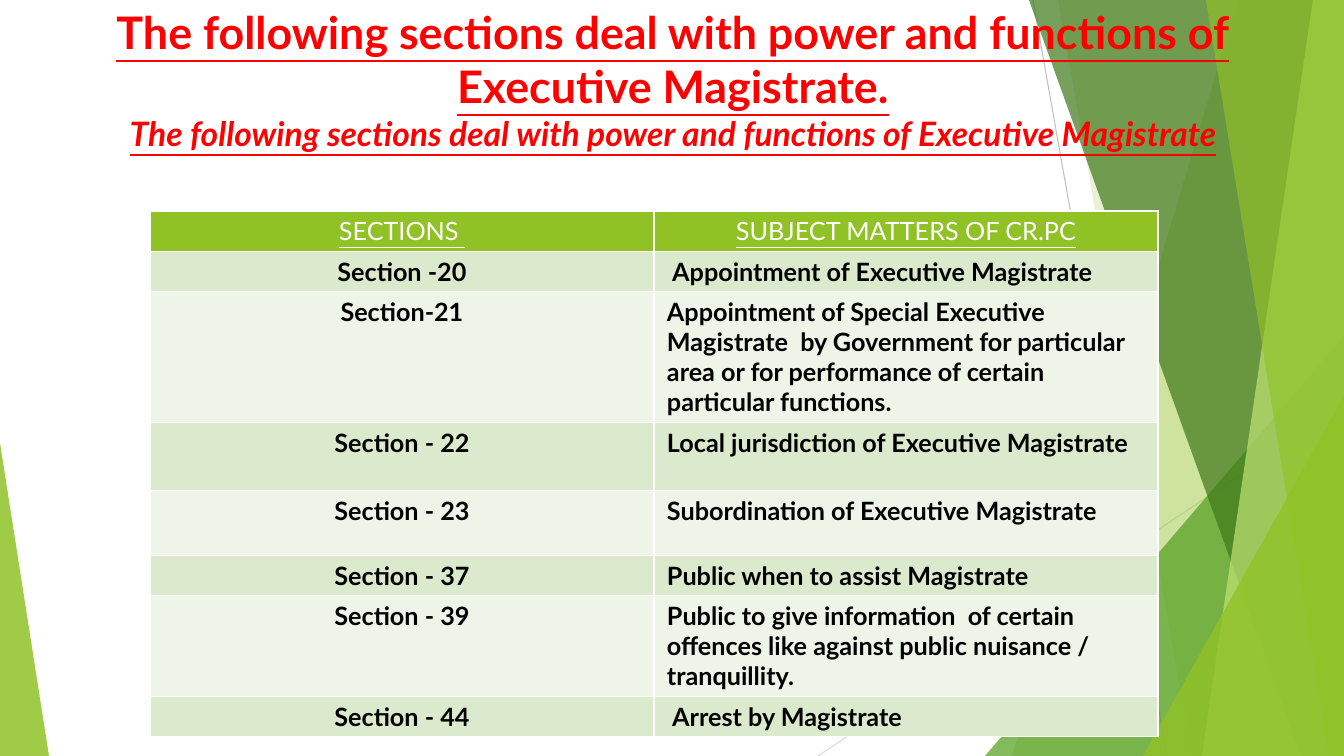
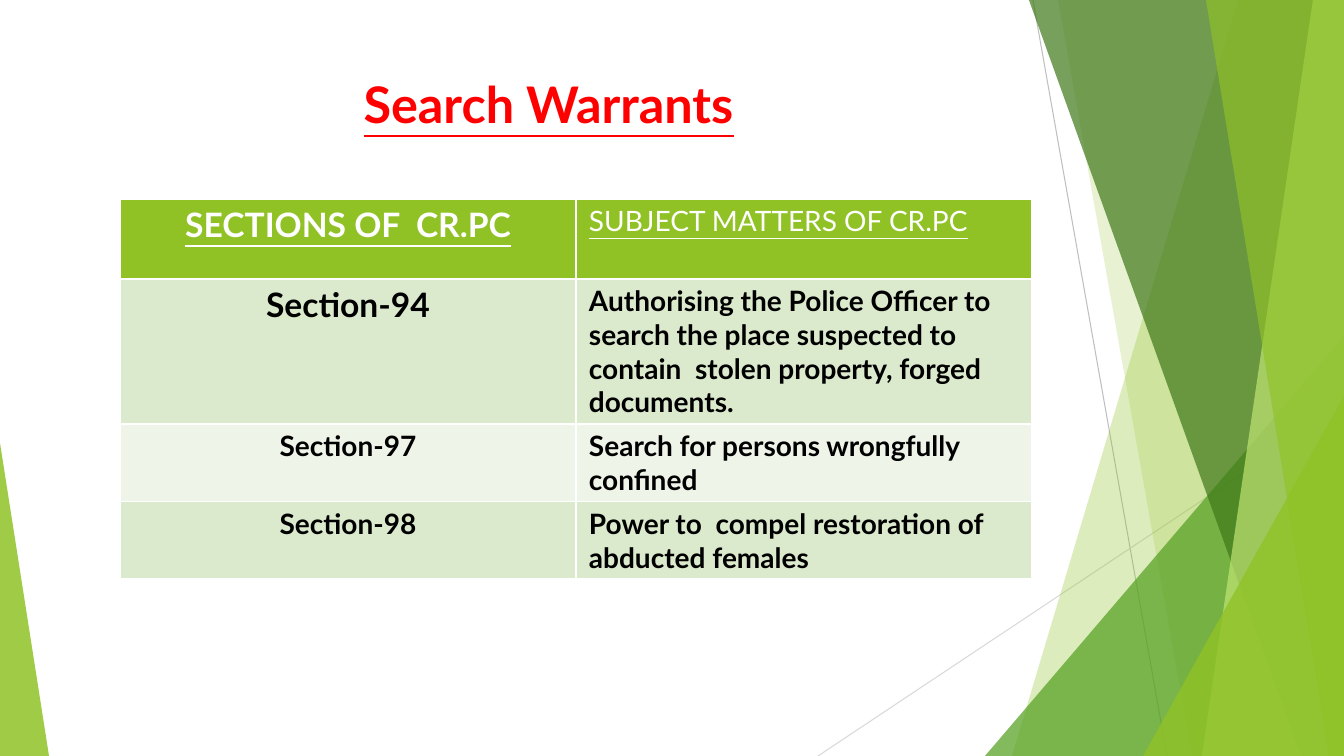
import pptx
import pptx.dml.color
import pptx.enum.shapes
import pptx.enum.text
import pptx.oxml.ns
import pptx.util
from lxml import etree

PX = 914400 / 100.8
WIDTH, HEIGHT = 1344, 756
FONT = "Lato"
COLORS = {
    "white": "FFFFFF", "black": "000000", "red": "FF0000",
    "lime": "90C226", "green": "54A021", "forest": "3F7819", "pale lime": "C0E474",
    "band dark": "DBE9CD", "band light": "EEF4E8",
    "line dark": "BFBFBF", "line light": "D9D9D9",
}
CENTER = pptx.enum.text.PP_ALIGN.CENTER
LEFT = pptx.enum.text.PP_ALIGN.LEFT
TRIANGLE = pptx.enum.shapes.MSO_SHAPE.ISOSCELES_TRIANGLE
STRAIGHT = pptx.enum.shapes.MSO_CONNECTOR.STRAIGHT

# Start and end points, colour
BACKDROP_LINES = [
    ((1033, 0, 1167, HEIGHT), "line dark"),
    ((WIDTH, 406, 818, HEIGHT), "line light"),
]
# A band runs to the right edge from (top x, bottom x);
# a triangle has (left, top, width, height, apex position).
BACKDROP_FACETS = [
    ((1238, 1012), "lime", 30),
    ((1058, 1192), "lime", 20),
    ((985, 336, 359, 420, 1), "green", 72),
    ((1029, 1301), "forest", 70),
    ((1313, 1202), "pale lime", 70),
    ((1206, 1329), "lime", 65),
    ((1143, 396, 201, 360, 1), "lime", 80),
    ((0, 443, 49, 313, 0), "lime", 85),
]

TITLE = {"color": "red", "bold": True, "underline": True}
HEADER = {"color": "white", "bold": False, "underline": True}
BODY = {"color": "black", "bold": True, "underline": False}

SLIDES = [
    {
        "title_box": (55, 0, 1236, 182),
        "title": [
            ("The following sections deal with power and functions of Executive Magistrate.",
             {"size": 32}),
            ("The following sections deal with power and functions of Executive Magistrate",
             {"size": 24, "italic": True}),
        ],
        "table_place": (150, 211),
        "column_width": 504,
        "cell_size": 18,
        "rows": [
            (40, "SECTIONS ", "SUBJECT MATTERS OF CR.PC"),
            (40, "Section -20", " Appointment of Executive Magistrate"),
            (131, "Section-21", "Appointment of Special Executive Magistrate  by Government "
                                "for particular area or for performance of certain "
                                "particular functions."),
            (68, "Section - 22", "Local jurisdiction of Executive Magistrate"),
            (65, "Section - 23", "Subordination of Executive Magistrate"),
            (40, "Section - 37", "Public when to assist Magistrate"),
            (101, "Section - 39", "Public to give information  of certain offences like "
                                  "against public nuisance / tranquillity."),
            (40, "Section - 44", " Arrest by Magistrate"),
        ],
        "header_alignments": (CENTER, CENTER),
        "special_cells": {},
    },
    {
        "title_box": (75, 68, 947, 145),
        "title": [("Search Warrants", {"size": 36})],
        "table_place": (120, 199),
        "column_width": 456,
        "cell_size": 20,
        "rows": [
            (80, "SECTIONS OF  CR.PC", "SUBJECT MATTERS OF CR.PC"),
            (145, "Section-94", "Authorising the Police Officer to search the place "
                                "suspected to contain  stolen property, forged documents."),
            (78, "Section-97", "Search for persons wrongfully confined"),
            (77, "Section-98", "Power to  compel restoration of abducted females"),
        ],
        "header_alignments": (CENTER, LEFT),
        "special_cells": {(0, 0): {"size": 24, "bold": True}, (1, 0): {"size": 24}},
    },
]


def px(*lengths):
    return [pptx.util.Emu(round(length * PX)) for length in lengths]


def write(paragraph, text, alignment, text_format):
    """Add one run whose font takes every value of text_format."""
    paragraph.alignment = alignment
    run = paragraph.add_run()
    run.text = text
    run.font.name = FONT
    for name, value in text_format.items():
        if name == "color":
            run.font.color.rgb = pptx.dml.color.RGBColor.from_string(COLORS[value])
        elif name == "size":
            run.font.size = pptx.util.Pt(value)
        else:
            setattr(run.font, name, value)


presentation = pptx.Presentation()
presentation.slide_width, presentation.slide_height = px(WIDTH, HEIGHT)

for content in SLIDES:
    slide = presentation.slides.add_slide(presentation.slide_layouts[6])

    for ends, color in BACKDROP_LINES:
        connector = slide.shapes.add_connector(STRAIGHT, *px(*ends))
        connector.line.color.rgb = pptx.dml.color.RGBColor.from_string(COLORS[color])
        connector.line.width = pptx.util.Pt(0.75)
        etree.SubElement(connector._element.spPr, pptx.oxml.ns.qn("a:effectLst"))

    for geometry, color, opacity in BACKDROP_FACETS:
        if len(geometry) == 2:
            top_x, bottom_x = geometry
            builder = slide.shapes.build_freeform(top_x, 0, scale=PX)
            builder.add_line_segments([(WIDTH, 0), (WIDTH, HEIGHT), (bottom_x, HEIGHT)])
            shape = builder.convert_to_shape()
        else:
            *box, apex = geometry
            shape = slide.shapes.add_shape(TRIANGLE, *px(*box))
            shape.adjustments[0] = apex
        shape.shadow.inherit = False
        shape.line.fill.background()
        shape.fill.solid()
        shape.fill.fore_color.rgb = pptx.dml.color.RGBColor.from_string(COLORS[color])
        fill_color = shape._element.spPr.find(".//" + pptx.oxml.ns.qn("a:srgbClr"))
        alpha = etree.SubElement(fill_color, pptx.oxml.ns.qn("a:alpha"))
        alpha.set("val", str(opacity * 1000))

    title_frame = slide.shapes.add_textbox(*px(*content["title_box"])).text_frame
    title_frame.word_wrap = True
    for index, (text, text_format) in enumerate(content["title"]):
        paragraph = title_frame.add_paragraph() if index else title_frame.paragraphs[0]
        write(paragraph, text, CENTER, {**TITLE, **text_format})

    rows = content["rows"]
    table_size = (2 * content["column_width"], sum(row[0] for row in rows))
    table = slide.shapes.add_table(
        len(rows), 2, *px(*content["table_place"], *table_size)).table
    for column in table.columns:
        column.width, = px(content["column_width"])
    for row_index, (height, *texts) in enumerate(rows):
        table.rows[row_index].height, = px(height)
        if row_index == 0:
            fill, row_format, alignments = "lime", HEADER, content["header_alignments"]
        else:
            fill = "band dark" if row_index % 2 else "band light"
            row_format, alignments = BODY, (CENTER, LEFT)
        for column_index, text in enumerate(texts):
            cell = table.cell(row_index, column_index)
            cell.fill.solid()
            cell.fill.fore_color.rgb = pptx.dml.color.RGBColor.from_string(COLORS[fill])
            cell.margin_left, cell.margin_top, cell.margin_right, cell.margin_bottom = px(
                13, 5, 13, 5)
            special = content["special_cells"].get((row_index, column_index), {})
            write(cell.text_frame.paragraphs[0], text, alignments[column_index],
                  {"size": content["cell_size"], **row_format, **special})

presentation.save("out.pptx")
